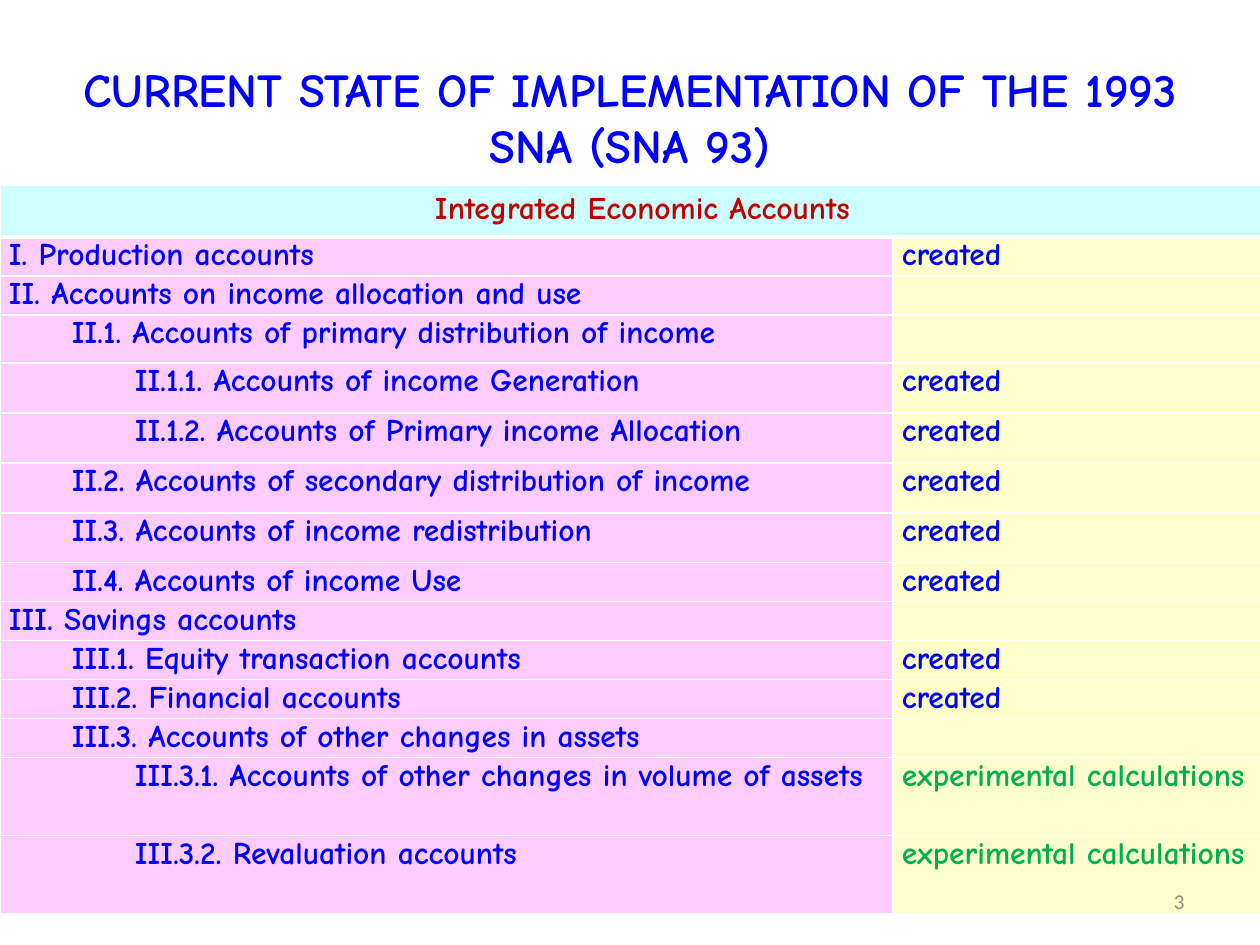
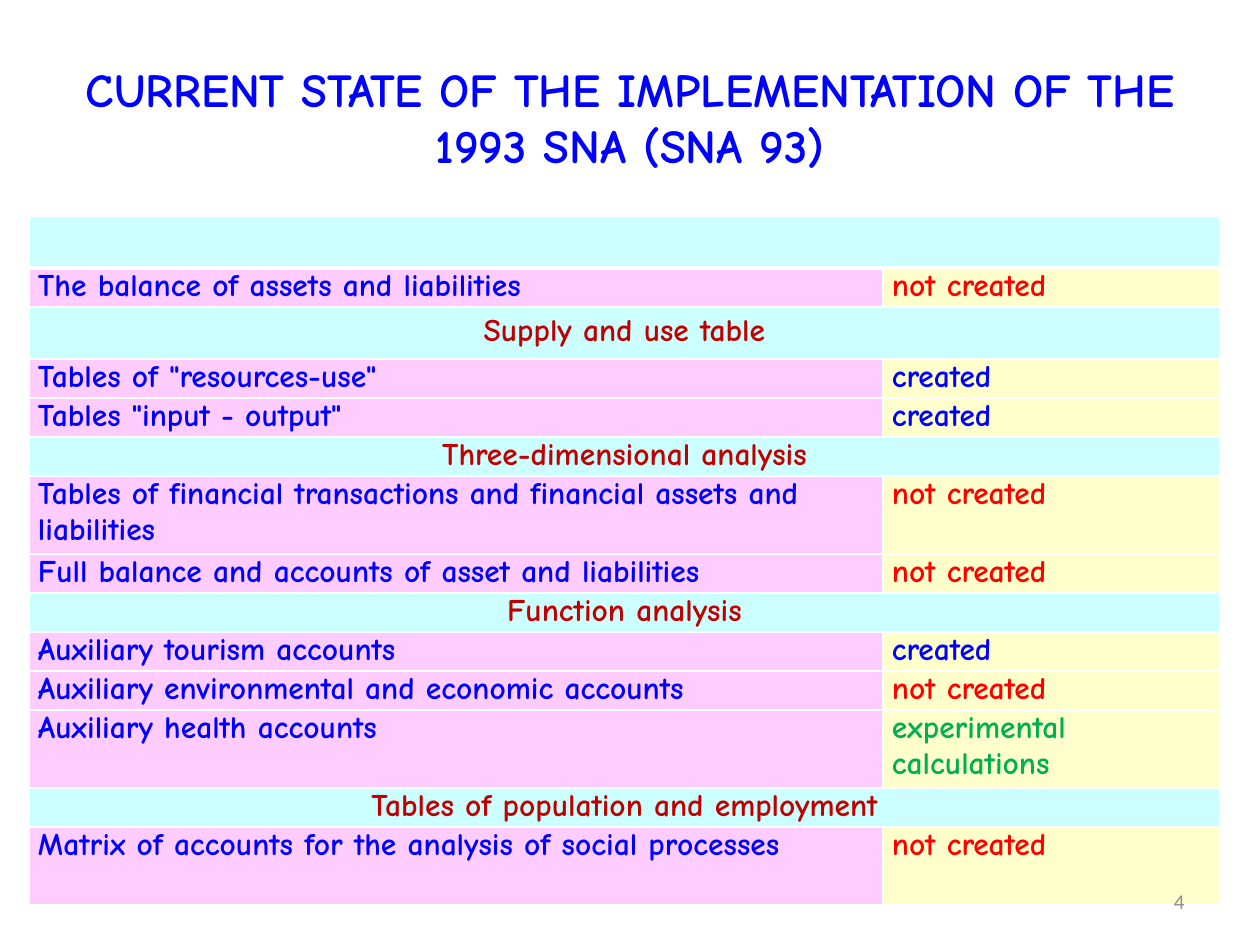
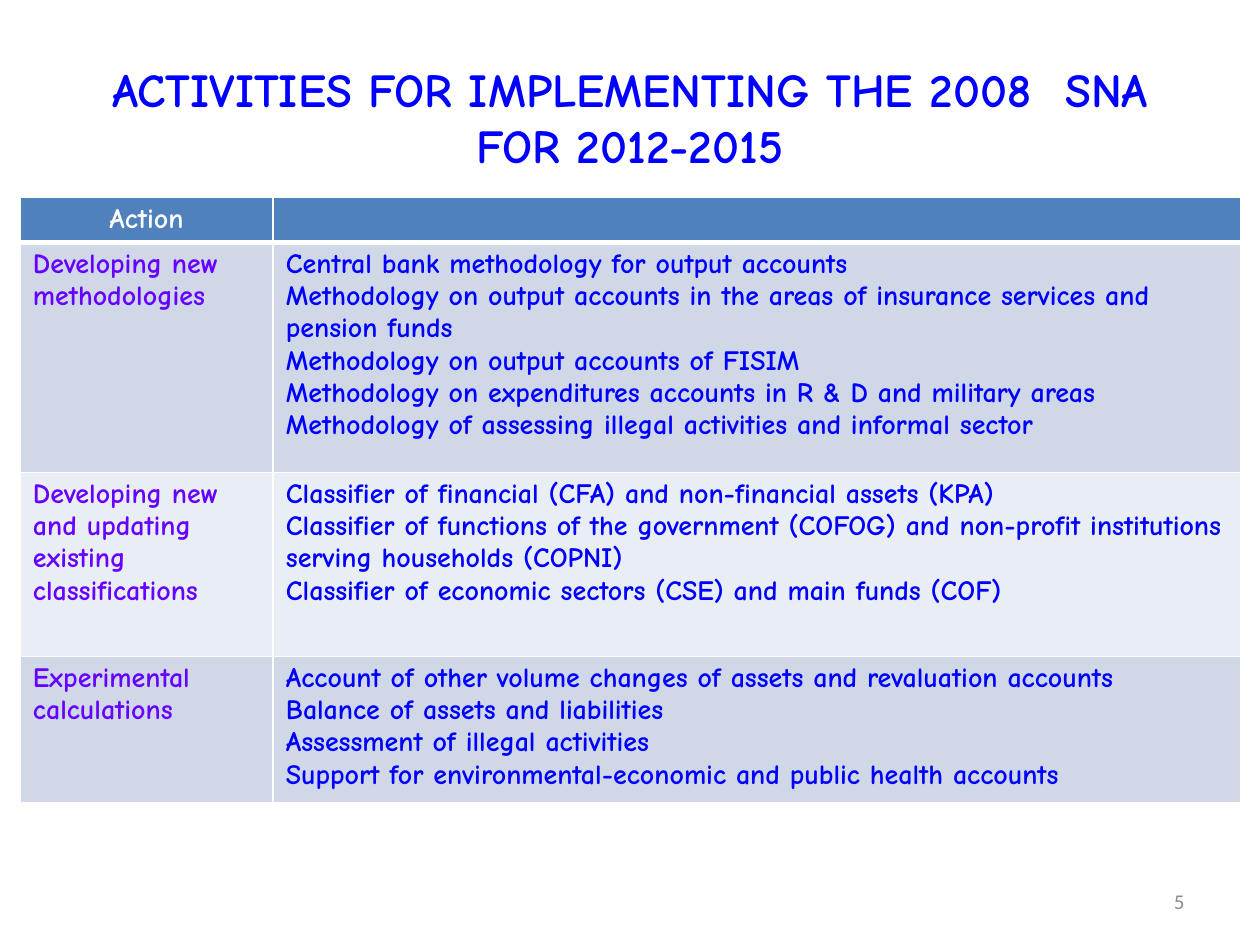
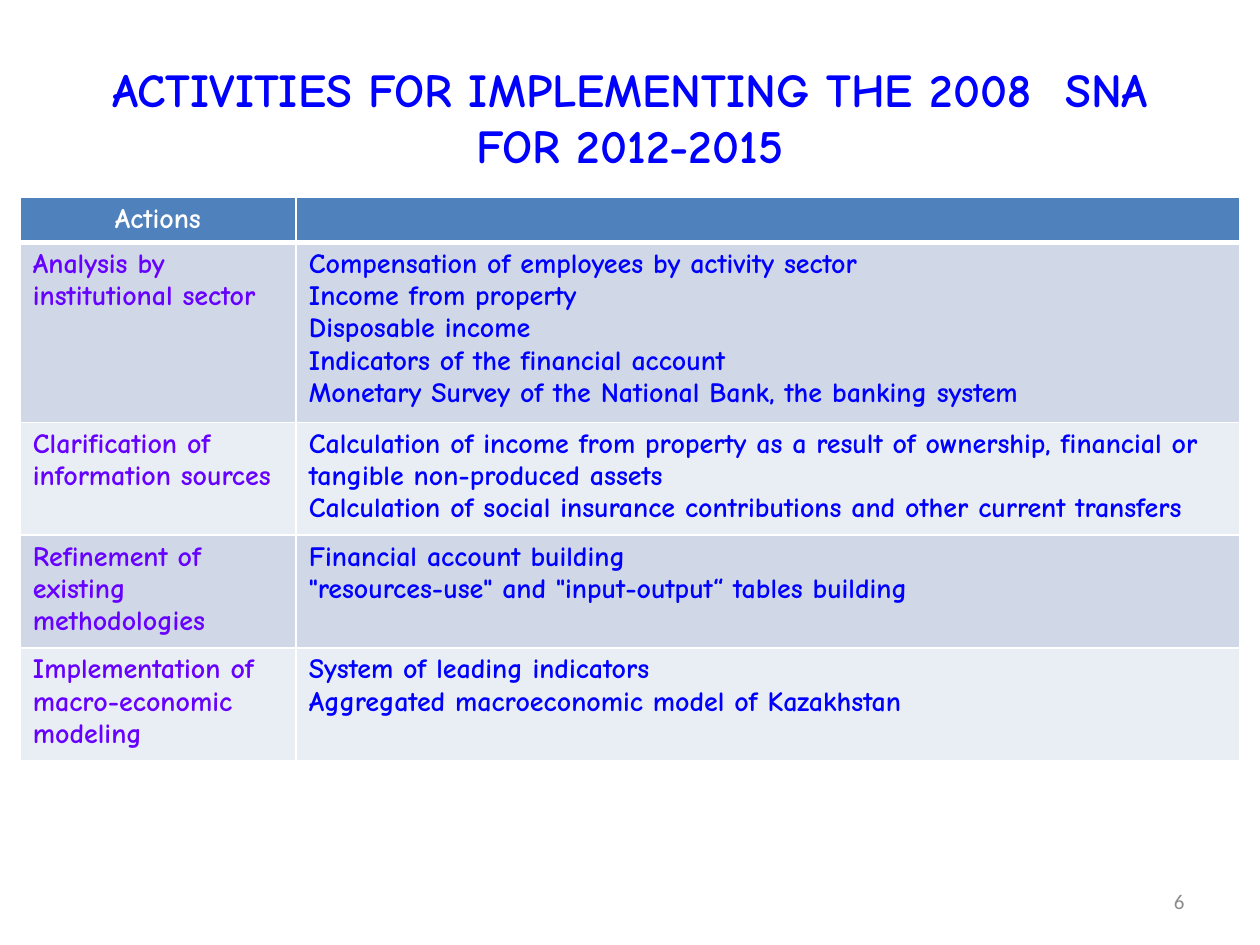
from lxml.etree import SubElement
from pptx import Presentation
from pptx.dml.color import RGBColor
from pptx.enum.text import MSO_ANCHOR, PP_ALIGN
from pptx.oxml.ns import qn
from pptx.util import Emu, Pt

EMU_PER_PX = 914400 / 126
SLIDE_SIZE = (1260, 945)
TITLE_BOX = (63, 38, 1134, 157)
NUMBER_BOX = (903, 876, 294, 50)

FONT = "Comic Neue"
NUMBER_FONT = "Calibri"

WHITE = "FFFFFF"
BLUE = "0000FF"
VIOLET = "6600FF"
DARK_RED = "C00000"
GRAY = "8C8C8C"
SECTION_FILL = "CCFFFF"
ACCOUNT_FILL = "FFCCFF"
STATUS_FILL = "FFFFCC"
HEADER_FILL = "4F81BD"
BAND_FILLS = ("D0D8E8", "E9EDF4")

CREATED = "created"
NOT_CREATED = "not created"
EXPERIMENTAL = "experimental calculations"
STATUS_COLORS = {CREATED: BLUE, NOT_CREATED: "FF0000", EXPERIMENTAL: "00B050"}

LINE_ROW = 39
INDENT = 63
ACTION_HEADER_ROW = 43

# Account rows: (height, indent level, account, status); section rows: (height, heading)
INTEGRATED_ACCOUNTS = [
    (52, "Integrated Economic Accounts"),
    (39, 0, "I. Production accounts", CREATED),
    (39, 0, "II. Accounts on income allocation and use", ""),
    (48, 1, "II.1. Accounts of primary distribution of income", ""),
    (50, 2, "II.1.1. Accounts of income Generation", CREATED),
    (50, 2, "II.1.2. Accounts of Primary income Allocation", CREATED),
    (50, 1, "II.2. Accounts of secondary distribution of income", CREATED),
    (50, 1, "II.3. Accounts of income redistribution", CREATED),
    (39, 1, "II.4. Accounts of income Use", CREATED),
    (39, 0, "III. Savings accounts", ""),
    (39, 1, "III.1. Equity transaction accounts", CREATED),
    (39, 1, "III.2. Financial accounts", CREATED),
    (39, 1, "III.3. Accounts of other changes in assets", ""),
    (78, 2, "III.3.1. Accounts of other changes in volume of assets", EXPERIMENTAL),
    (78, 2, "III.3.2. Revaluation accounts", EXPERIMENTAL),
]
OTHER_ACCOUNTS = [
    (52, ""),
    (39, 0, "The balance of assets and liabilities", NOT_CREATED),
    (52, "Supply and use table"),
    (39, 0, 'Tables of "resources-use"', CREATED),
    (39, 0, 'Tables "input - output"', CREATED),
    (39, "Three-dimensional analysis"),
    (78, 0, "Tables of financial transactions and financial assets and liabilities",
     NOT_CREATED),
    (39, 0, "Full balance and accounts of asset and liabilities", NOT_CREATED),
    (39, "Function analysis"),
    (39, 0, "Auxiliary tourism accounts", CREATED),
    (39, 0, "Auxiliary environmental and economic accounts", NOT_CREATED),
    (78, 0, "Auxiliary health accounts", EXPERIMENTAL),
    (39, "Tables of population and employment"),
    (78, 0, "Matrix of accounts for the analysis of social processes", NOT_CREATED),
]

# Action rows: (height, action, steps)
METHODOLOGY_ACTIONS = [
    (230, "Developing new methodologies", [
        "Central bank methodology for output accounts",
        "Methodology on output accounts in the areas of insurance services and pension funds",
        "Methodology on output accounts of FISIM",
        "Methodology on expenditures accounts in R & D and military areas",
        "Methodology of assessing illegal activities and informal sector",
    ]),
    (184, "Developing new and updating existing classifications", [
        "Classifier of financial (CFA) and non-financial assets (KPA)",
        "Classifier of functions of the government (COFOG) and non-profit institutions "
        "serving households (COPNI)",
        "Classifier of economic sectors (CSE) and main funds (COF)",
    ]),
    (140, "Experimental calculations", [
        "Account of other volume changes of assets and revaluation accounts",
        "Balance of assets and liabilities",
        "Assessment of illegal activities",
        "Support for environmental-economic and public health accounts",
    ]),
]
ANALYSIS_ACTIONS = [
    (174, "Analysis by institutional sector", [
        "Compensation of employees by activity sector",
        "Income from property",
        "Disposable income",
        "Indicators of the financial account",
        "Monetary Survey of the National Bank, the banking system",
    ]),
    (109, "Clarification of information sources", [
        "Calculation of income from property as a result of ownership, financial or "
        "tangible non-produced assets",
        "Calculation of social insurance contributions and other current transfers",
    ]),
    (109, "Refinement of existing methodologies", [
        "Financial account building",
        '"resources-use" and "input-output“ tables building',
    ]),
    (109, "Implementation of macro-economic modeling", [
        "System of leading indicators",
        "Aggregated macroeconomic model of Kazakhstan",
    ]),
]


def px(length):
    return Emu(round(length * EMU_PER_PX))


def color(hex_code):
    return RGBColor.from_string(hex_code)


def write_text(frame, lines, size=18, font=FONT, text_color=BLUE, bold=True,
               align=PP_ALIGN.LEFT, level=0):
    """Write one paragraph for each line; a plain string is a single line."""
    lines = [lines] if isinstance(lines, str) else lines
    for index, line in enumerate(lines):
        paragraph = frame.add_paragraph() if index else frame.paragraphs[0]
        paragraph.alignment = align
        if level:
            paragraph.level = level
            properties = paragraph._p.get_or_add_pPr()
            properties.set("marL", str(px(level * INDENT)))
            properties.set("indent", "0")
        if line:
            run = paragraph.add_run()
            run.text = line
            run.font.size = Pt(size)
            run.font.name = font
            run.font.bold = bold
            run.font.color.rgb = color(text_color)


def add_text_box(slide, box, text, **text_format):
    frame = slide.shapes.add_textbox(*map(px, box)).text_frame
    frame.word_wrap = True
    frame.vertical_anchor = MSO_ANCHOR.MIDDLE
    write_text(frame, text, **text_format)


def set_borders(cell, bottom_width):
    properties = cell._tc.get_or_add_tcPr()
    for side, width in (("L", 1), ("R", 1), ("T", 1), ("B", bottom_width)):
        line = SubElement(properties, qn(f"a:ln{side}"), w=str(Pt(width)))
        fill = SubElement(line, qn("a:solidFill"))
        SubElement(fill, qn("a:srgbClr"), val=WHITE)


def format_cell(cell, text, fill, margins, bottom_width=1, **text_format):
    """Fill a cell; margins are (horizontal, vertical)."""
    set_borders(cell, bottom_width)
    cell.fill.solid()
    cell.fill.fore_color.rgb = color(fill)
    horizontal, vertical = margins
    cell.margin_left = cell.margin_right = px(horizontal)
    cell.margin_top = cell.margin_bottom = px(vertical if text else 0)
    write_text(cell.text_frame, text, **text_format)


def add_plain_table(slide, left, top, widths, heights):
    box = (left, top, sum(widths), sum(heights))
    table = slide.shapes.add_table(len(heights), len(widths), *map(px, box)).table
    table.horz_banding = False
    for column, width in zip(table.columns, widths):
        column.width = px(width)
    for row, height in zip(table.rows, heights):
        row.height = px(height)
    return table


def add_account_table(slide, left, top, widths, rows):
    table = add_plain_table(slide, left, top, widths, [row[0] for row in rows])
    for index, (height, *content) in enumerate(rows):
        first, second = table.cell(index, 0), table.cell(index, 1)
        bottom_width = 1 if index else 3
        if len(content) == 1:
            first.merge(second)
            margins = (12, (height - LINE_ROW) // 2)
            for cell, heading in ((first, content[0]), (second, "")):
                format_cell(cell, heading, SECTION_FILL, margins, bottom_width,
                            text_color=DARK_RED, align=PP_ALIGN.CENTER)
        else:
            level, account, status = content
            format_cell(first, account, ACCOUNT_FILL, (9, 0), level=level)
            format_cell(second, status, STATUS_FILL, (9, 0), align=PP_ALIGN.JUSTIFY,
                        text_color=STATUS_COLORS.get(status, BLUE))


def add_action_table(slide, left, top, widths, header, rows):
    heights = [ACTION_HEADER_ROW] + [row[0] for row in rows]
    table = add_plain_table(slide, left, top, widths, heights)
    margins = (13, 6)
    for column, heading in enumerate((header, "")):
        format_cell(table.cell(0, column), heading, HEADER_FILL, margins, 3, size=16,
                    text_color=WHITE, align=PP_ALIGN.CENTER)
    for index, (_, action, steps) in enumerate(rows):
        fill = BAND_FILLS[index % 2]
        for column, (text, text_color) in enumerate(((action, VIOLET), (steps, BLUE))):
            format_cell(table.cell(index + 1, column), text, fill, margins, size=16,
                        text_color=text_color)


def add_table_slide(presentation, number, title, add_table, *table_arguments):
    slide = presentation.slides.add_slide(presentation.slide_layouts[6])
    add_text_box(slide, TITLE_BOX, title, size=27, align=PP_ALIGN.CENTER)
    add_table(slide, *table_arguments)
    add_text_box(slide, NUMBER_BOX, str(number), size=12, font=NUMBER_FONT, bold=False,
                 text_color=GRAY, align=PP_ALIGN.RIGHT)


def main():
    presentation = Presentation()
    presentation.slide_width, presentation.slide_height = map(px, SLIDE_SIZE)
    activities_title = "ACTIVITIES FOR IMPLEMENTING THE 2008  SNA FOR 2012-2015"
    slides = [
        ("CURRENT STATE OF IMPLEMENTATION OF THE 1993 SNA (SNA 93)",
         add_account_table, 0, 185, (893, 392), INTEGRATED_ACCOUNTS),
        ("CURRENT STATE OF THE IMPLEMENTATION OF THE 1993 SNA (SNA 93)",
         add_account_table, 29, 216, (854, 337), OTHER_ACCOUNTS),
        (activities_title,
         add_action_table, 20, 197, (253, 968), "Action", METHODOLOGY_ACTIONS),
        (activities_title,
         add_action_table, 20, 197, (276, 944), "Actions", ANALYSIS_ACTIONS),
    ]
    for number, content in enumerate(slides, start=3):
        add_table_slide(presentation, number, *content)
    presentation.save("out.pptx")


if __name__ == "__main__":
    main()
